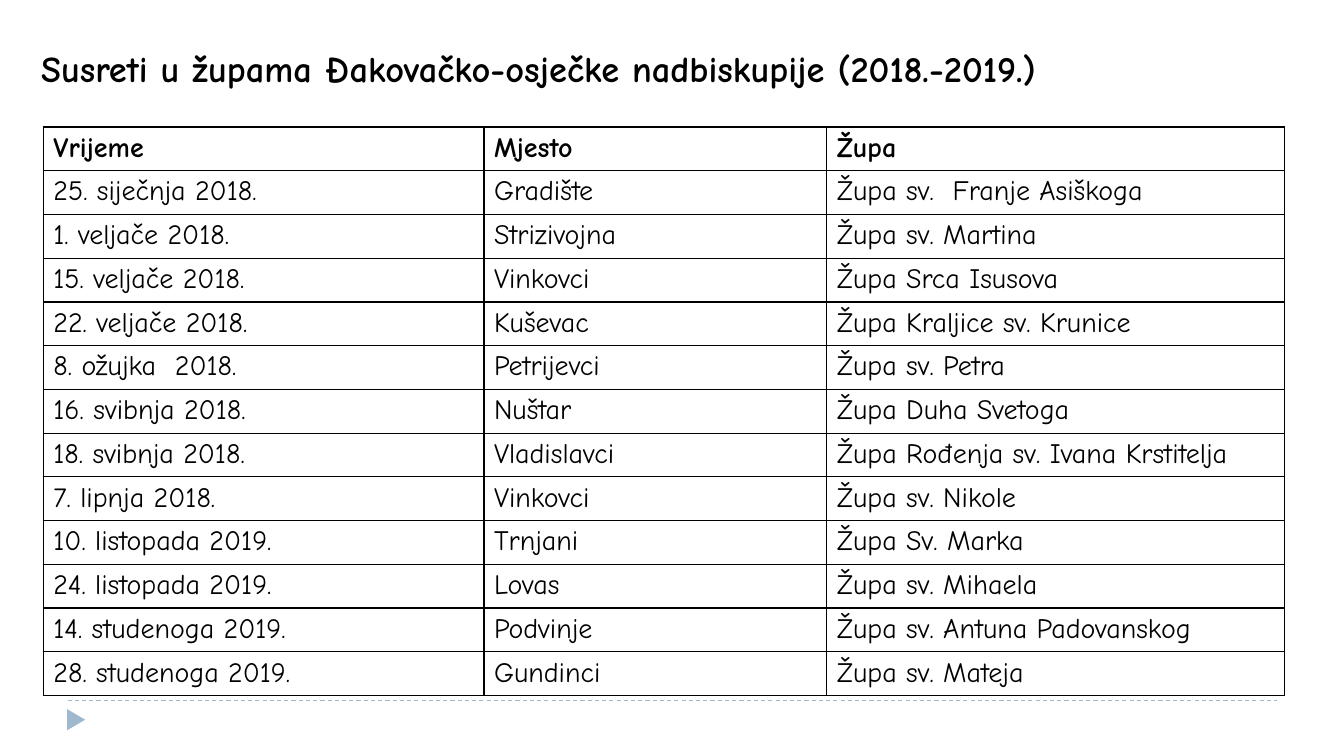
from pptx import Presentation
from pptx.dml.color import RGBColor
from pptx.enum import dml, shapes, text
from pptx.oxml import parse_xml
from pptx.oxml.ns import nsdecls
from pptx.util import Inches, Pt

BLACK = RGBColor(0x00, 0x00, 0x00)
ACCENT = RGBColor(0x9F, 0xB8, 0xCD)
FONT = "Comic Neue"
TITLE = "Susreti u župama Đakovačko-osječke nadbiskupije (2018.-2019.)"
COLUMN_WIDTHS = (4.37, 3.4, 4.54)
MEETINGS = (
    ("Vrijeme", "Mjesto", "Župa"),
    ("25. siječnja 2018.", "Gradište", "Župa sv.  Franje Asiškoga"),
    ("1. veljače 2018.", "Strizivojna", "Župa sv. Martina"),
    ("15. veljače 2018.", "Vinkovci", "Župa Srca Isusova"),
    ("22. veljače 2018.", "Kuševac", "Župa Kraljice sv. Krunice"),
    ("8. ožujka  2018.", "Petrijevci", "Župa sv. Petra"),
    ("16. svibnja 2018.", "Nuštar", "Župa Duha Svetoga"),
    ("18. svibnja 2018.", "Vladislavci", "Župa Rođenja sv. Ivana Krstitelja"),
    ("7. lipnja 2018.", "Vinkovci", "Župa sv. Nikole"),
    ("10. listopada 2019.", "Trnjani", "Župa Sv. Marka"),
    ("24. listopada 2019.", "Lovas", "Župa sv. Mihaela"),
    ("14. studenoga 2019.", "Podvinje", "Župa sv. Antuna Padovanskog"),
    ("28. studenoga 2019.", "Gundinci", "Župa sv. Mateja"),
)


def write(frame, words, size=20, bold=False, color=BLACK):
    """Write one formatted span into a text frame."""
    span = frame.paragraphs[0].add_run()
    span.text = words
    span.font.name = FONT
    span.font.size = Pt(size)
    span.font.bold = bold
    span.font.color.rgb = color


def add_title(page):
    """Add the slide heading."""
    box = page.shapes.add_textbox(Inches(0.31), Inches(0.41), Inches(12.68), Inches(0.94))
    box.text_frame.word_wrap = True
    box.text_frame.auto_size = text.MSO_AUTO_SIZE.SHAPE_TO_FIT_TEXT
    write(box.text_frame, TITLE, size=26, bold=True)


def add_footer(page):
    """Add the dashed footer line and its triangular marker."""
    line = page.shapes.add_connector(
        shapes.MSO_CONNECTOR.STRAIGHT, Inches(0.67), Inches(6.95), Inches(12.67), Inches(6.95))
    line.line.color.rgb = ACCENT
    line.line.width = Pt(0.75)
    line.line.dash_style = dml.MSO_LINE.DASH
    line._element.spPr.append(parse_xml(f"<a:effectLst {nsdecls('a')}/>"))
    marker = page.shapes.add_shape(
        shapes.MSO_SHAPE.ISOSCELES_TRIANGLE, Inches(0.65), Inches(7.05), Inches(0.21), Inches(0.18))
    marker.rotation = 90
    marker.shadow.inherit = False
    marker.fill.solid()
    marker.fill.fore_color.rgb = ACCENT
    marker.line.fill.background()


def add_borders(cell, width=1):
    """Draw a solid border on every side of a cell."""
    properties = cell._tc.get_or_add_tcPr()
    for index, side in enumerate(("lnL", "lnR", "lnT", "lnB")):
        properties.insert(index, parse_xml(
            f'<a:{side} {nsdecls("a")} w="{Pt(width)}"><a:solidFill>'
            f'<a:srgbClr val="{BLACK}"/></a:solidFill></a:{side}>'))


def add_meetings(page):
    """Add the table of parish meetings."""
    table = page.shapes.add_table(
        len(MEETINGS), len(COLUMN_WIDTHS),
        Inches(0.43), Inches(1.26), Inches(sum(COLUMN_WIDTHS)), Inches(5.63)).table
    table.horz_banding = False
    for column, width in zip(table.columns, COLUMN_WIDTHS):
        column.width = Inches(width)
    for row, meeting in enumerate(MEETINGS):
        for column, words in enumerate(meeting):
            cell = table.cell(row, column)
            cell.fill.background()
            add_borders(cell)
            write(cell.text_frame, words, bold=row == 0)


def main():
    """Build and save the slide."""
    deck = Presentation()
    deck.slide_width, deck.slide_height = Inches(13.33), Inches(7.5)
    page = deck.slides.add_slide(deck.slide_layouts[6])
    add_footer(page)
    add_title(page)
    add_meetings(page)
    deck.save("out.pptx")


if __name__ == "__main__":
    main()
